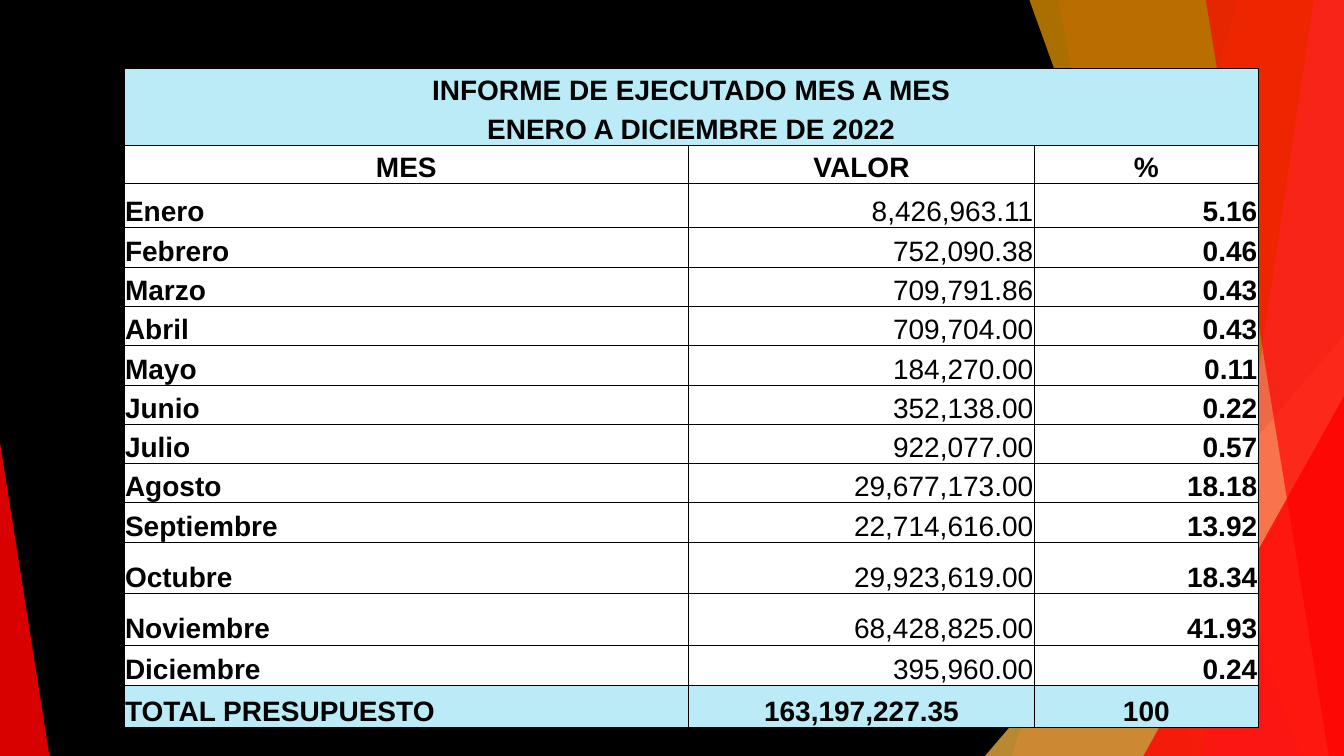
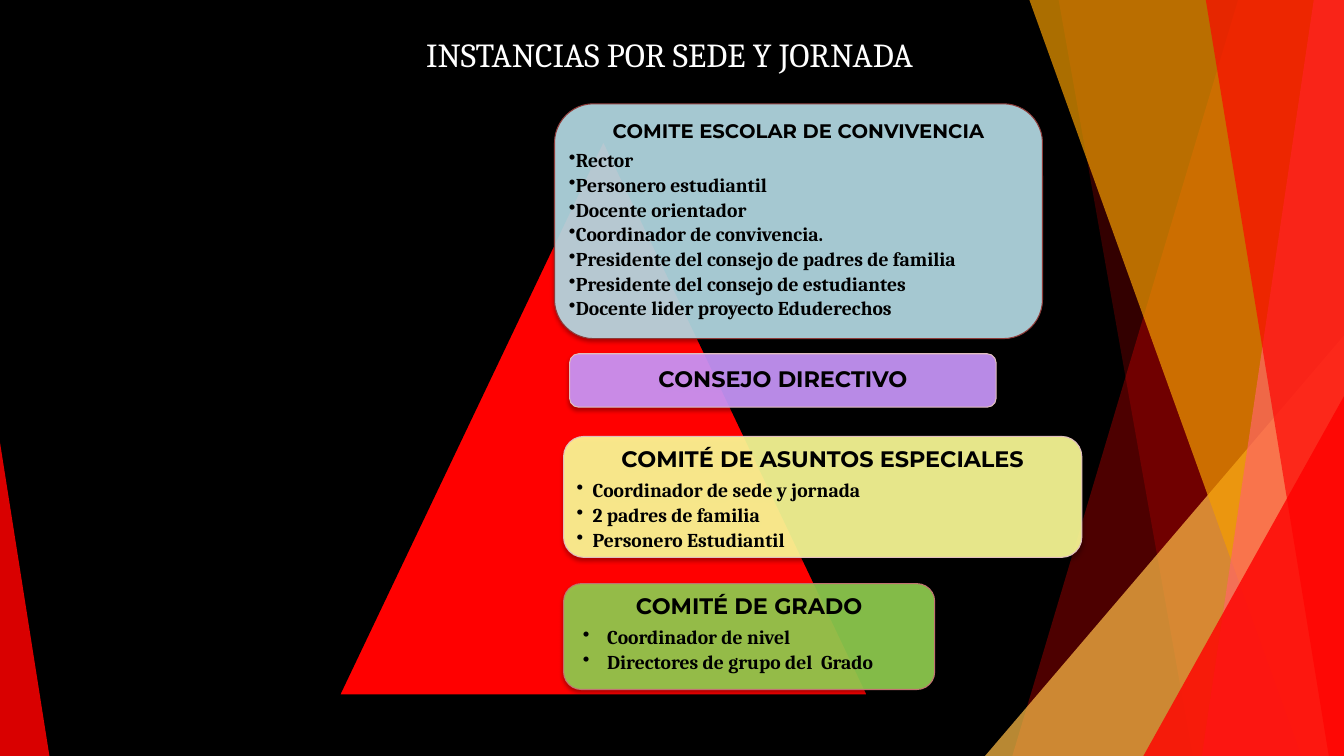
import lxml.etree
import pptx
import pptx.dml.color
import pptx.enum.shapes
import pptx.enum.text
import pptx.oxml.ns
import pptx.util

Inches = pptx.util.Inches
Pt = pptx.util.Pt
qn = pptx.oxml.ns.qn
RGB = pptx.dml.color.RGBColor.from_string
SHAPE = pptx.enum.shapes.MSO_SHAPE
ALIGN = pptx.enum.text.PP_ALIGN
ANCHOR = pptx.enum.text.MSO_ANCHOR

COLORS = {
    "black": "000000", "white": "FFFFFF", "red": "FF0000", "amber": "FFBD47",
    "orange": "F49D00", "pink": "FF6666", "header": "BAEBF6", "blue": "B7DEE8",
    "yellow": "FFFF99", "green": "92D050", "purple": "CC99FF",
    "brick": "8E3B39", "blush": "E0BEBE", "rose": "C17371",
}


def add_xml(parent, tag, **attributes):
    return lxml.etree.SubElement(parent, qn(tag), attributes)


def paint(shape, color, opacity=100, outline=None, width=0.75):
    shape.shadow.inherit = False
    shape.fill.solid()
    shape.fill.fore_color.rgb = RGB(COLORS[color])
    if opacity < 100:
        srgb = shape.fill._xPr.find(".//" + qn("a:srgbClr"))
        add_xml(srgb, "a:alpha", val=str(opacity * 1000))
    if outline:
        shape.line.color.rgb = RGB(COLORS[outline])
        shape.line.width = Pt(width)
    else:
        shape.line.fill.background()


prs = pptx.Presentation()
prs.slide_width, prs.slide_height = Inches(13.33), Inches(7.5)
blank = prs.slide_layouts[6]
for placeholder in list(blank.placeholders):
    placeholder.element.getparent().remove(placeholder.element)
blank.background.fill.solid()
blank.background.fill.fore_color.rgb = RGB(COLORS["black"])
budget = prs.slides.add_slide(blank)
committees = prs.slides.add_slide(blank)

# Shared backdrop: drawn once, then moved to the layout
for x1, y1, x2, y2 in [(10.25, 0, 11.58, 7.5), (13.33, 4.03, 8.12, 7.5)]:
    ray = budget.shapes.add_connector(
        pptx.enum.shapes.MSO_CONNECTOR.STRAIGHT,
        Inches(x1), Inches(y1), Inches(x2), Inches(y2))
    ray.line.color.rgb = RGB(COLORS["black"])
    ray.line.width = Pt(0.75)
    add_xml(ray._element.spPr, "a:effectLst")

# Bands reach the right edge: top x, bottom x, colour, opacity
# Corners are right triangles: left, top, width, apex, colour, opacity
backdrop = [
    ("band", 12.28, 10.04, "red", 30),
    ("band", 10.5, 11.83, "red", 20),
    ("corner", 9.77, 3.33, 3.56, 1, "amber", 72),
    ("band", 10.21, 12.91, "orange", 70),
    ("band", 13.03, 11.92, "pink", 70),
    ("band", 11.96, 13.18, "red", 65),
    ("corner", 11.34, 3.93, 1.99, 1, "red", 80),
    ("corner", 0, 4.39, 0.49, 0, "red", 85),
]
for kind, *geometry, color, opacity in backdrop:
    if kind == "band":
        top_x, bottom_x = geometry
        outline = budget.shapes.build_freeform(Inches(top_x), 0)
        outline.add_line_segments([
            (Inches(13.33), 0), (Inches(13.33), Inches(7.5)),
            (Inches(bottom_x), Inches(7.5))], close=True)
        facet = outline.convert_to_shape()
    else:
        left, top, width, apex = geometry
        facet = budget.shapes.add_shape(
            SHAPE.ISOSCELES_TRIANGLE, Inches(left), Inches(top),
            Inches(width), Inches(7.5 - top))
        facet.adjustments[0] = apex
    paint(facet, color, opacity)
for part in list(budget.shapes):
    blank.shapes._spTree.append(part._element)

# Slide 1: spending by month
rows = [
    ("INFORME DE EJECUTADO MES A MES", "", ""),
    ("ENERO A DICIEMBRE DE 2022", "", ""),
    ("MES", "VALOR", "%"),
    ("Enero", "8,426,963.11", "5.16"),
    ("Febrero", "752,090.38", "0.46"),
    ("Marzo", "709,791.86", "0.43"),
    ("Abril", "709,704.00", "0.43"),
    ("Mayo", "184,270.00", "0.11"),
    ("Junio", "352,138.00", "0.22"),
    ("Julio", "922,077.00", "0.57"),
    ("Agosto", "29,677,173.00", "18.18"),
    ("Septiembre", "22,714,616.00", "13.92"),
    ("Octubre", "29,923,619.00", "18.34"),
    ("Noviembre", "68,428,825.00", "41.93"),
    ("Diciembre", "395,960.00", "0.24"),
    ("TOTAL PRESUPUESTO", "163,197,227.35", "100"),
]
heights = [0.38] * 3 + [0.44] + [0.39] * 8 + [0.51] * 2 + [0.4, 0.42]
last = len(rows) - 1
spending = budget.shapes.add_table(
    len(rows), 3, Inches(1.23), Inches(0.68), Inches(11.25), Inches(6.54)).table
spending.first_row = spending.horz_banding = False
for column, width in zip(spending.columns, [5.6, 3.43, 2.22]):
    column.width = Inches(width)
for r, (texts, height) in enumerate(zip(rows, heights)):
    spending.rows[r].height = Inches(height)
    heading = r < 2
    if heading:
        spending.cell(r, 0).merge(spending.cell(r, 2))
    for c, text in enumerate(texts[:1] if heading else texts):
        cell = spending.cell(r, c)
        # Outer edges are thicker; the two heading rows share no line
        edges = {
            "a:lnL": 1 if c == 0 else 0.5,
            "a:lnR": 1 if c == 2 or heading else 0.5,
            "a:lnT": {0: 1, 1: 0}.get(r, 0.5),
            "a:lnB": {0: 0, last: 1}.get(r, 0.5),
        }
        for tag, points in edges.items():
            edge = add_xml(cell._tc.get_or_add_tcPr(), tag, w=str(Pt(points)))
            if points:
                add_xml(add_xml(edge, "a:solidFill"), "a:srgbClr", val=COLORS["black"])
            else:
                add_xml(edge, "a:noFill")
        cell.fill.solid()
        cell.fill.fore_color.rgb = RGB(COLORS["header" if heading or r == last else "white"])
        cell.margin_left = cell.margin_right = cell.margin_top = Inches(0.01)
        cell.margin_bottom = 0
        cell.vertical_anchor = ANCHOR.BOTTOM
        cell.text_frame.text = text
        entry = cell.text_frame.paragraphs[0]
        month = 2 < r < last
        if r < 3 or (r == last and c):
            entry.alignment = ALIGN.CENTER
        else:
            entry.alignment = ALIGN.RIGHT if c else ALIGN.LEFT
        entry.font.name, entry.font.size = "Arial", Pt(20)
        entry.font.bold = not (month and c == 1)
        entry.font.color.rgb = RGB(COLORS["black"])

# Slide 2: title and pyramid
title = committees.shapes.add_textbox(Inches(2.39), Inches(0.13), Inches(8.5), Inches(0.66))
title.text_frame.word_wrap = True
title.text_frame.vertical_anchor = ANCHOR.BOTTOM
title.text_frame.text = "INSTANCIAS POR SEDE Y JORNADA"
heading = title.text_frame.paragraphs[0]
heading.alignment = ALIGN.CENTER
heading.font.name, heading.font.size = "Cambria", Pt(24)
heading.font.color.rgb = RGB(COLORS["white"])

pyramid = committees.shapes.add_shape(
    SHAPE.ISOSCELES_TRIANGLE, Inches(3.36), Inches(1.39), Inches(5.25), Inches(5.51))
paint(pyramid, "red", outline="black", width=1.5)

# Committees: place, fill, outline, side inset, heading size, text indent, hang, lines
panels = [
    ((5.5, 1.03, 4.84, 2.33), "blue", "brick", 0.03, 14, 0.06, 0.06, [
        "COMITE ESCOLAR DE CONVIVENCIA", "Rector", "Personero estudiantil",
        "Docente orientador", "Coordinador de convivencia.",
        "Presidente del consejo de padres de familia",
        "Presidente del consejo de estudiantes",
        "Docente lider proyecto Eduderechos"]),
    ((5.59, 4.33, 5.14, 1.2), "yellow", "blush", 0.07, 16, 0.16, 0.16, [
        "COMITÉ DE ASUNTOS ESPECIALES", "Coordinador de sede y jornada",
        "2 padres de familia", "Personero Estudiantil"]),
    ((5.59, 5.79, 3.68, 1.05), "green", "rose", 0.07, 16, 0.31, 0.24, [
        "COMITÉ DE GRADO", "Coordinador de nivel",
        "Directores de grupo del  Grado"]),
    ((5.65, 3.51, 4.23, 0.53), "purple", "blush", 0.07, 16, 0, 0, [
        "CONSEJO DIRECTIVO"]),
]
for place, color, outline, inset, size, indent, hang, lines in panels:
    panel = committees.shapes.add_shape(
        SHAPE.ROUNDED_RECTANGLE, *[Inches(length) for length in place])
    paint(panel, color, 90, outline)
    shadow = add_xml(
        panel._element.spPr.find(qn("a:effectLst")), "a:outerShdw",
        blurRad=str(Pt(3.1)), dist=str(Pt(1.8)), dir="5400000", rotWithShape="0")
    add_xml(add_xml(shadow, "a:srgbClr", val=COLORS["black"]), "a:alpha", val="35000")
    frame = panel.text_frame
    frame.word_wrap = True
    frame.margin_left = frame.margin_right = Inches(inset)
    frame.margin_top = frame.margin_bottom = Inches(0.06)
    frame.vertical_anchor = ANCHOR.TOP if len(lines) > 1 else ANCHOR.MIDDLE
    frame.text = "\n".join(lines)
    for n, line in enumerate(frame.paragraphs):
        line.line_spacing = 0.9
        if n == 0:
            line.alignment = ALIGN.CENTER
            line.space_after = Pt(6 if len(lines) > 1 else 0)
        else:
            line.alignment = ALIGN.LEFT
            line.space_after = Pt(2.5)
            layout = line._p.get_or_add_pPr()
            layout.set("marL", str(Inches(indent)))
            layout.set("indent", str(-Inches(hang)))
            add_xml(layout, "a:buChar", char="•")
        line.font.name = "Cambria" if n else "Montserrat"
        line.font.size = Pt(14 if n else size)
        line.font.bold = True
        line.font.color.rgb = RGB(COLORS["black"])

prs.save("out.pptx")
